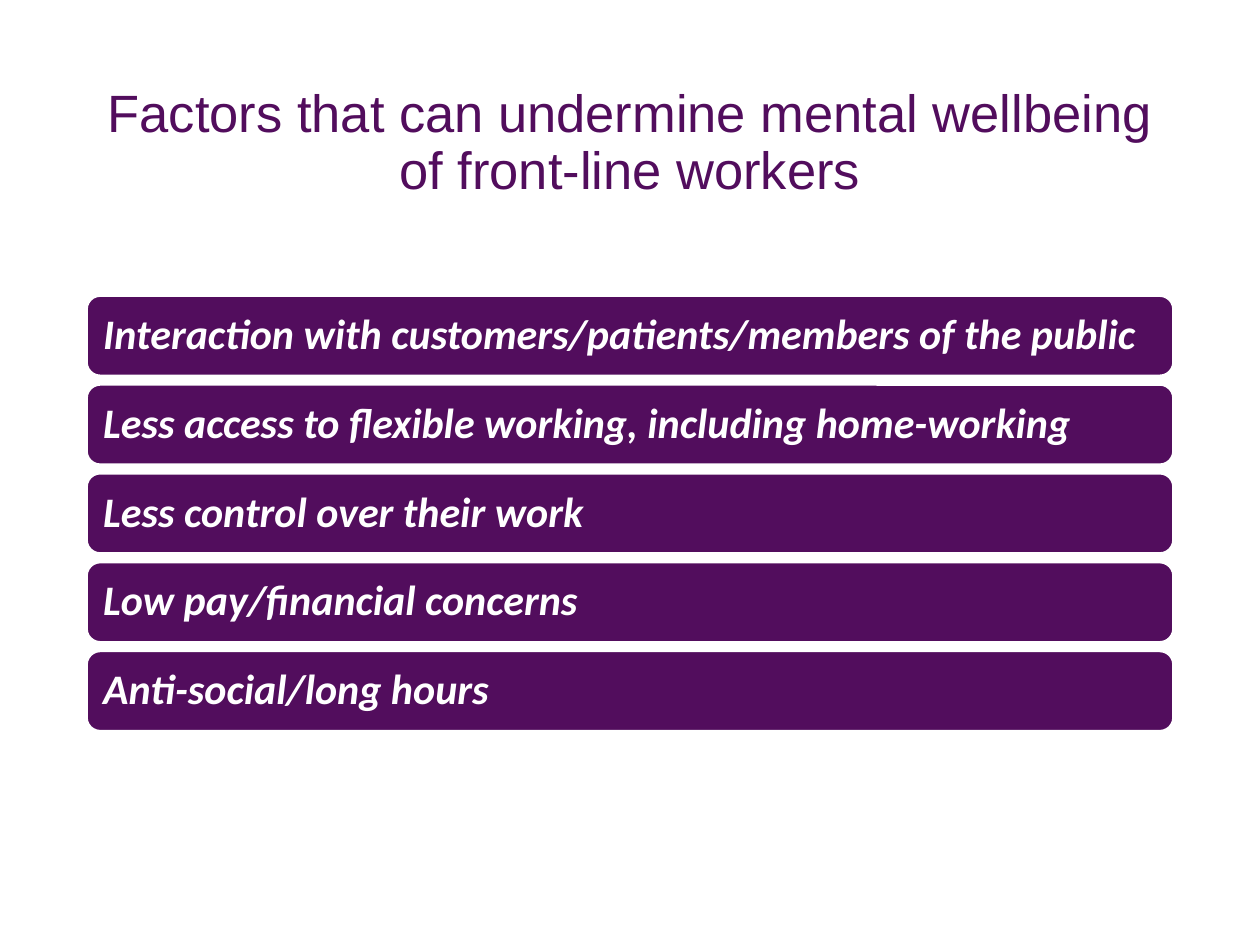
from dataclasses import dataclass

from pptx import Presentation
from pptx.dml.color import RGBColor
from pptx.enum.shapes import MSO_SHAPE
from pptx.enum.text import MSO_ANCHOR, PP_ALIGN
from pptx.util import Inches, Pt

ROUNDED = MSO_SHAPE.ROUNDED_RECTANGLE
MIDDLE = MSO_ANCHOR.MIDDLE
LEFT, CENTER = PP_ALIGN.LEFT, PP_ALIGN.CENTER

PURPLE = "520D5D"
WHITE = "FFFFFF"

MARGIN, CONTENT_WIDTH = 0.69, 8.62
TITLE_TOP, TITLE_HEIGHT = 0.39, 1.51
FIRST_BAR_TOP, LAST_BAR_TOP, BAR_HEIGHT = 2.35, 5.17, 0.63

TITLE = "Factors that can undermine mental wellbeing of front-line workers"
FACTORS = [
    "Interaction with customers/patients/members of the public",
    "Less access to flexible working, including home-working",
    "Less control over their work",
    "Low pay/financial concerns",
    "Anti-social/long hours",
]


@dataclass(frozen=True)
class TextStyle:
    font: str
    size: int
    color: str
    align: PP_ALIGN
    emphasis: bool = False


TITLE_STYLE = TextStyle("Arial", 30, PURPLE, CENTER)
BAR_STYLE = TextStyle("Calibri", 24, WHITE, LEFT, emphasis=True)


def rgb(value: str) -> RGBColor:
    return RGBColor.from_string(value)


def write_text(shape, text: str, style: TextStyle) -> None:
    """Set one vertically centred, wrapped paragraph in the given style."""
    frame = shape.text_frame
    frame.text = text
    frame.word_wrap = True
    frame.vertical_anchor = MIDDLE
    frame.margin_left = frame.margin_right = Inches(0.1)
    para = frame.paragraphs[0]
    para.alignment = style.align
    para.line_spacing = 0.9
    font = para.runs[0].font
    font.name = style.font
    font.size = Pt(style.size)
    font.bold = font.italic = style.emphasis
    font.color.rgb = rgb(style.color)


def add_title(page) -> None:
    box = page.shapes.add_textbox(
        Inches(MARGIN), Inches(TITLE_TOP), Inches(CONTENT_WIDTH), Inches(TITLE_HEIGHT)
    )
    write_text(box, TITLE, TITLE_STYLE)


def add_factor_bar(page, top: float, text: str) -> None:
    bar = page.shapes.add_shape(
        ROUNDED, Inches(MARGIN), Inches(top), Inches(CONTENT_WIDTH), Inches(BAR_HEIGHT)
    )
    bar.shadow.inherit = False
    bar.fill.solid()
    bar.fill.fore_color.rgb = rgb(PURPLE)
    bar.line.color.rgb = rgb(WHITE)
    bar.line.width = Pt(1)
    write_text(bar, text, BAR_STYLE)


def main() -> None:
    deck = Presentation()
    deck.slide_width, deck.slide_height = Inches(10), Inches(7.5)
    page = deck.slides.add_slide(deck.slide_layouts[6])
    add_title(page)
    pitch = (LAST_BAR_TOP - FIRST_BAR_TOP) / (len(FACTORS) - 1)
    for index, factor in enumerate(FACTORS):
        add_factor_bar(page, FIRST_BAR_TOP + index * pitch, factor)
    deck.save("out.pptx")


if __name__ == "__main__":
    main()
